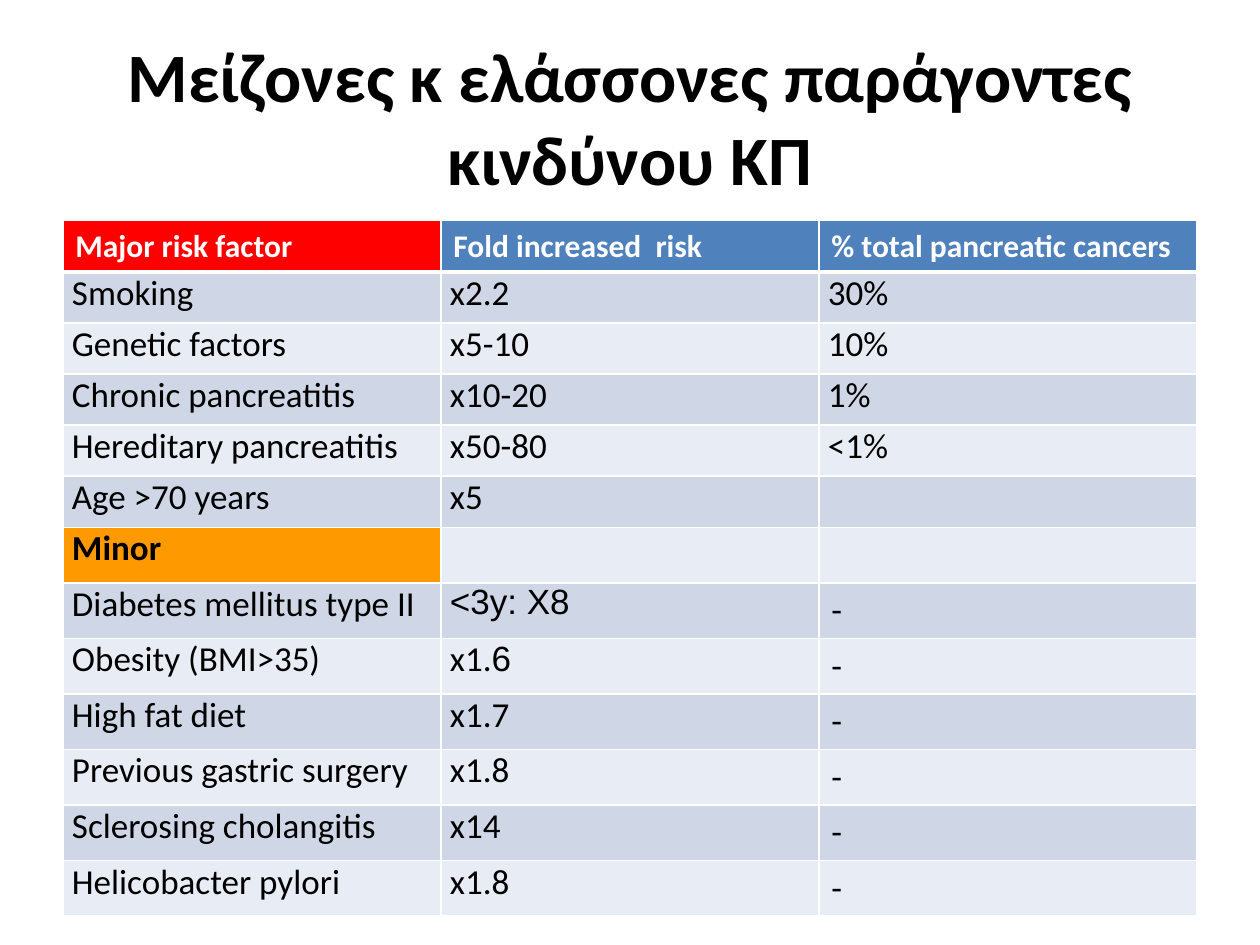
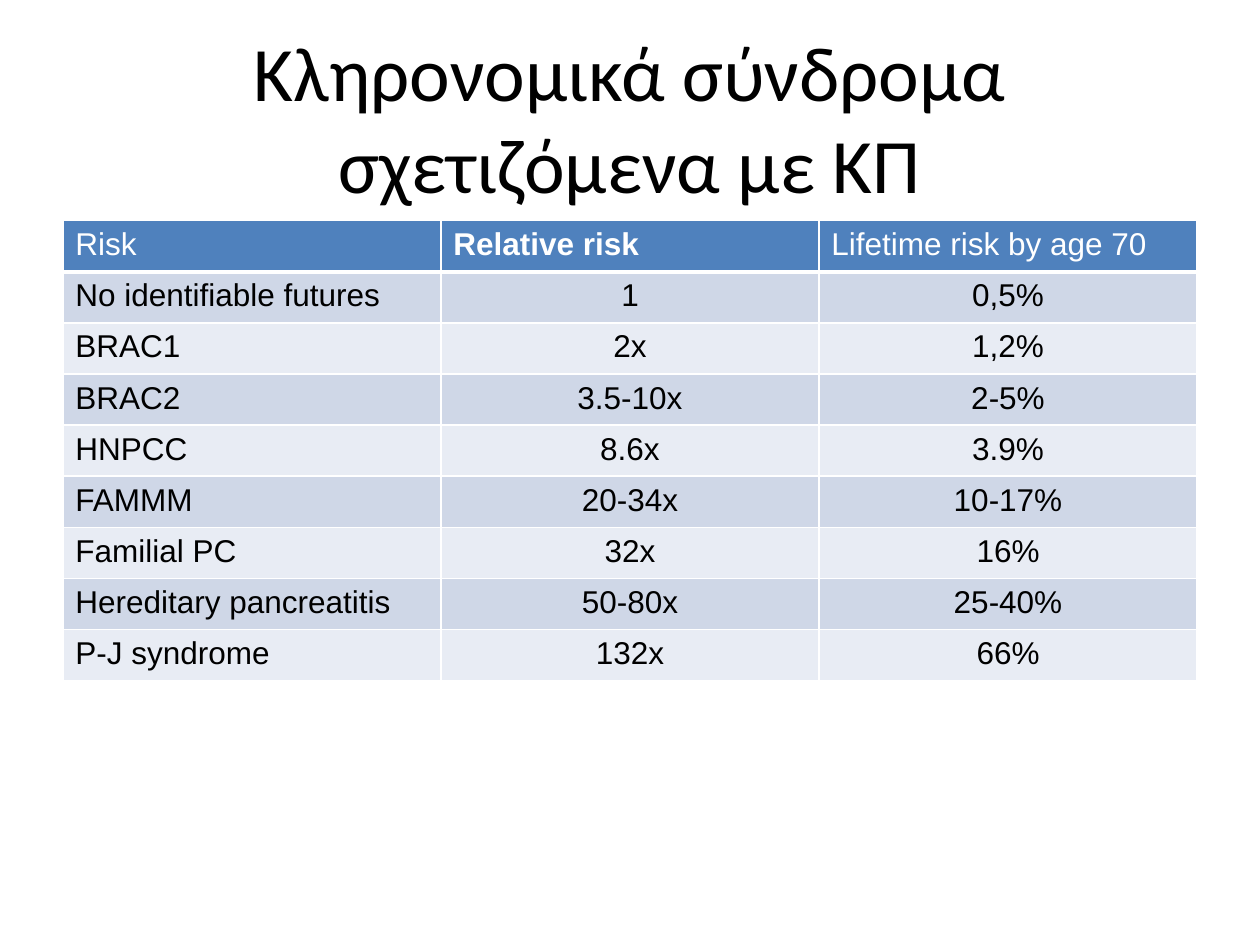
from lxml.etree import SubElement
from pptx import Presentation
from pptx.dml.color import RGBColor
from pptx.enum.text import MSO_ANCHOR, PP_ALIGN
from pptx.oxml.ns import qn
from pptx.util import Cm, Pt

# Content
RISK_FACTORS = [
    ("Major risk factor", "Fold increased  risk", "% total pancreatic cancers"),
    ("Smoking", "x2.2", "30%"),
    ("Genetic factors", "x5-10", "10%"),
    ("Chronic pancreatitis", "x10-20", "1%"),
    ("Hereditary pancreatitis", "x50-80", "<1%"),
    ("Age >70 years", "x5", ""),
    ("Minor", "", ""),
    ("Diabetes mellitus type II", "<3y: X8", "-"),
    ("Obesity (BMI>35)", ("x1.", "6"), "-"),
    ("High fat diet", "x1.7", "-"),
    ("Previous gastric surgery", "x1.8", "-"),
    ("Sclerosing cholangitis", "x14", "-"),
    ("Helicobacter pylori", "x1.8", "-"),
]
SYNDROMES = [
    ("Risk", "Relative risk", "Lifetime risk by age 70"),
    ("No identifiable futures", "1", "0,5%"),
    ("BRAC1", "2x", "1,2%"),
    ("BRAC2", "3.5-10x", "2-5%"),
    ("HNPCC", "8.6x", "3.9%"),
    ("FAMMM", "20-34x", "10-17%"),
    ("Familial PC", "32x", "16%"),
    ("Hereditary pancreatitis", "50-80x", "25-40%"),
    ("P-J syndrome", "132x", "66%"),
]

# Shared look
COLORS = {
    "text": "000000", "white": "FFFFFF", "header": "4F81BD",
    "band_dark": "CFD7E7", "band_light": "E8ECF4",
    "major": "FF0000", "minor": "FF9900",
}
LEFT, WIDTH = Cm(1.27), Cm(22.86)
TITLE_TOP, TITLE_HEIGHT = Cm(0.76), Cm(3.18)
TABLE_TOP = Cm(4.45)
ROW_HEIGHT, TALL_ROW_HEIGHT = Cm(1.03), Cm(1.12)
ROOMY = (Cm(0.25), Cm(0.13))
TIGHT = (Cm(0.18), Cm(0))


def rgb(name):
    return RGBColor.from_string(COLORS[name])


def set_font(font, size, name, color="text", bold=False):
    font.size, font.name, font.bold = Pt(size), name, bold
    font.color.rgb = rgb(color)


def add_title(slide, text, size, bold):
    tf = slide.shapes.add_textbox(LEFT, TITLE_TOP, WIDTH, TITLE_HEIGHT).text_frame
    tf.word_wrap = True
    tf.vertical_anchor = MSO_ANCHOR.MIDDLE
    p = tf.paragraphs[0]
    p.text, p.alignment = text, PP_ALIGN.CENTER
    set_font(p.font, size, "Calibri", bold=bold)


def set_borders(cell, row):
    """White grid with a thick rule under the header row."""
    widths = {"lnL": 1, "lnR": 1, "lnT": 3 if row == 1 else 1, "lnB": 3 if row == 0 else 1}
    tc_pr = cell._tc.get_or_add_tcPr()
    for position, (tag, width) in enumerate(widths.items()):
        ln = SubElement(tc_pr, qn(f"a:{tag}"), w=str(Pt(width)))
        fill = SubElement(ln, qn("a:solidFill"))
        SubElement(fill, qn("a:srgbClr"), val=COLORS["white"])
        tc_pr.insert(position, ln)


def add_grid(slide, rows, style_cell):
    columns = len(rows[0])
    height = ROW_HEIGHT * len(rows)
    table = slide.shapes.add_table(len(rows), columns, LEFT, TABLE_TOP, WIDTH, height).table
    table.first_row = table.horz_banding = False
    for r, values in enumerate(rows):
        table.rows[r].height = ROW_HEIGHT
        band = "header" if r == 0 else "band_dark" if r % 2 else "band_light"
        for c, value in enumerate(values):
            cell = table.cell(r, c)
            cell.fill.solid()
            cell.fill.fore_color.rgb = rgb(band)
            set_borders(cell, r)
            p = cell.text_frame.paragraphs[0]
            for part in [value] if isinstance(value, str) else value:
                if part:
                    p.add_run().text = part
            cell.margin_left = cell.margin_right = ROOMY[0]
            cell.margin_top = cell.margin_bottom = ROOMY[1]
            style_cell(cell, p, r, c)
    return table


def style_risk_factor(cell, p, row, column):
    if row == 0:
        set_font(p.font, 18, "Calibri", "white", True)
        return
    set_font(p.font, 20, "Arial" if p.text.startswith("<3y") else "Calibri", bold=p.text == "Minor")
    if p.text != "-":
        cell.margin_left = cell.margin_right = TIGHT[0]
        cell.margin_top = cell.margin_bottom = TIGHT[1]
        p.alignment = PP_ALIGN.JUSTIFY
    for r in p.runs[1:]:
        r.font.name = "Arial"


def style_syndrome(cell, p, row, column):
    header = row == 0
    set_font(p.font, 18, "Arial", "white" if header else "text", header and column == 1)
    if column and not header:
        p.alignment = PP_ALIGN.CENTER


def main():
    prs = Presentation()
    prs.slide_width, prs.slide_height = Cm(25.4), Cm(19.05)
    blank = prs.slide_layouts[6]

    # Major and minor risk factors
    s = prs.slides.add_slide(blank)
    add_title(s, "Μείζονες κ ελάσσονες παράγοντες κινδύνου ΚΠ", 39.6, True)
    table = add_grid(s, RISK_FACTORS, style_risk_factor)
    minor_row = [row[0] for row in RISK_FACTORS].index("Minor")
    for row, color in ((0, "major"), (minor_row, "minor")):
        table.cell(row, 0).fill.fore_color.rgb = rgb(color)
    for row in range(minor_row, len(RISK_FACTORS)):
        table.rows[row].height = TALL_ROW_HEIGHT

    # Hereditary syndromes
    s = prs.slides.add_slide(blank)
    add_title(s, "Κληρονομικά σύνδρομα σχετιζόμενα με ΚΠ", 44, False)
    add_grid(s, SYNDROMES, style_syndrome)

    prs.save("out.pptx")


if __name__ == "__main__":
    main()
